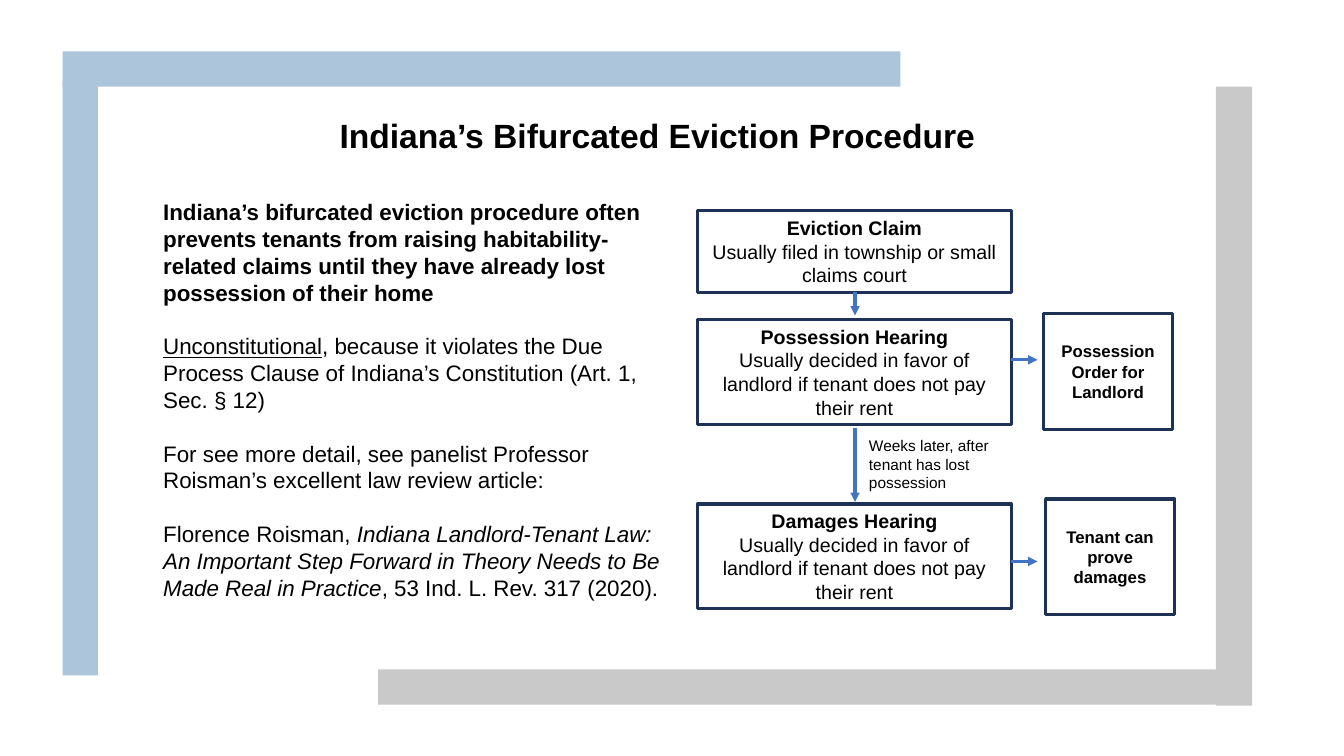
from lxml import etree
from pptx import Presentation
from pptx.dml.color import RGBColor
from pptx.enum.shapes import MSO_CONNECTOR, MSO_SHAPE
from pptx.enum.text import MSO_ANCHOR, MSO_AUTO_SIZE, PP_ALIGN
from pptx.oxml.ns import qn
from pptx.util import Emu, Pt

PX = 9144  # 100 px to the inch
RECT = MSO_SHAPE.RECTANGLE
STRAIGHT = MSO_CONNECTOR.STRAIGHT
LEFT, CENTER = PP_ALIGN.LEFT, PP_ALIGN.CENTER
TOP, MIDDLE = MSO_ANCHOR.TOP, MSO_ANCHOR.MIDDLE
NO_FIT = MSO_AUTO_SIZE.NONE

BLUE, GRAY, NAVY, ARROW = "ACC5DA", "C9C9C9", "1E3256", "4472C4"
BLACK, WHITE = "000000", "FFFFFF"

BARS = [
    (62, 51, 831, 35, BLUE),
    (62, 80, 35, 590, BLUE),
    (375, 664, 831, 35, GRAY),
    (1206, 86, 36, 614, GRAY),
]
RULING = "Usually decided in favor of landlord if tenant does not pay their rent"
STAGES = [
    (209, 81, "Eviction Claim", "Usually filed in township or small claims court"),
    (317, 104, "Possession Hearing", RULING),
    (500, 104, "Damages Hearing", RULING),
]
OUTCOMES = [
    (1035, 311, "Possession Order for Landlord"),
    (1037, 495, "Tenant can prove damages"),
]
ARROWS = [
    (848, 290, 848, 313),
    (848, 425, 848, 498),
    (1003, 357, 1029, 357),
    (1003, 557, 1029, 557),
]
ARGUMENT = [
    [("Indiana’s bifurcated eviction procedure often prevents tenants from raising "
      "habitability-related claims until they have already lost possession of their home",
      {"bold": True})],
    [("Unconstitutional", {"underline": True}),
     (", because it violates the Due Process Clause of Indiana’s Constitution "
      "(Art. 1, Sec. § 12)", {})],
    [("For see more detail, see panelist Professor Roisman’s excellent law review article:",
      {})],
    [("Florence Roisman, ", {}),
     ("Indiana Landlord-Tenant Law: An Important Step Forward in Theory Needs to Be "
      "Made Real in Practice", {"italic": True}),
     (", 53 Ind. L. Rev. 317 (2020).", {})],
]


def px(*lengths):
    return [Emu(n * PX) for n in lengths]


def rgb(value):
    return RGBColor.from_string(value)


def add_run(p, text, size, bold=False, italic=None, underline=None):
    r = p.add_run()
    r.text = text
    f = r.font
    f.name, f.size = "Arial", Pt(size)
    f.bold, f.italic, f.underline = bold, italic, underline
    f.color.rgb = rgb(BLACK)


def write(tf, paragraphs, size, align=LEFT, anchor=TOP, gap=0):
    """Fill a text frame with paragraphs, each a list of (text, format) runs."""
    tf.word_wrap = True
    tf.auto_size = NO_FIT
    tf.vertical_anchor = anchor
    for i, runs in enumerate(paragraphs):
        p = tf.paragraphs[0] if i == 0 else tf.add_paragraph()
        p.alignment = align
        p.space_before = Pt(gap if i else 0)
        for text, fmt in runs:
            add_run(p, text, size, **fmt)


def add_rect(s, x, y, w, h, fill, line=None):
    sp = s.shapes.add_shape(RECT, *px(x, y, w, h))
    sp.shadow.inherit = False
    sp.fill.solid()
    sp.fill.fore_color.rgb = rgb(fill)
    if line:
        sp.line.color.rgb = rgb(line)
        sp.line.width = Pt(2.25)
    else:
        sp.line.fill.background()
    return sp


def add_box(s, x, y, w, h, paragraphs, size):
    sp = add_rect(s, x, y, w, h, WHITE, NAVY)
    write(sp.text_frame, paragraphs, size, CENTER, MIDDLE)


def add_text(s, x, y, w, h, paragraphs, size, **fmt):
    sp = s.shapes.add_textbox(*px(x, y, w, h))
    write(sp.text_frame, paragraphs, size, **fmt)


def add_arrow(s, x1, y1, x2, y2):
    c = s.shapes.add_connector(STRAIGHT, *px(x1, y1, x2, y2))
    c.line.color.rgb = rgb(ARROW)
    c.line.width = Pt(2.25)
    etree.SubElement(c.line._get_or_add_ln(), qn("a:tailEnd"), type="triangle")
    etree.SubElement(c._element.spPr, qn("a:effectLst"))


def set_title(s, x, y, w, h, text):
    sp = s.shapes.title
    sp.left, sp.top, sp.width, sp.height = px(x, y, w, h)
    write(sp.text_frame, [[(text, {"bold": True})]], 24, CENTER, MIDDLE)


def main():
    prs = Presentation()
    prs.slide_width, prs.slide_height = px(1333, 750)
    s = prs.slides.add_slide(prs.slide_layouts[5])

    for bar in BARS:
        add_rect(s, *bar)
    set_title(s, 193, 109, 918, 50, "Indiana’s Bifurcated Eviction Procedure")
    add_text(s, 152, 192, 515, 441, ARGUMENT, 16, gap=19)

    for y, h, heading, detail in STAGES:
        add_box(s, 692, y, 311, h, [[(heading, {"bold": True})], [(detail, {})]], 14)
    for x, y, outcome in OUTCOMES:
        add_box(s, x, y, 128, 115, [[(outcome, {"bold": True})]], 12)
    for arrow in ARROWS:
        add_arrow(s, *arrow)
    add_text(s, 852, 428, 168, 66,
             [[("Weeks later, after tenant has lost possession", {})]], 11)

    prs.save("out.pptx")


if __name__ == "__main__":
    main()
